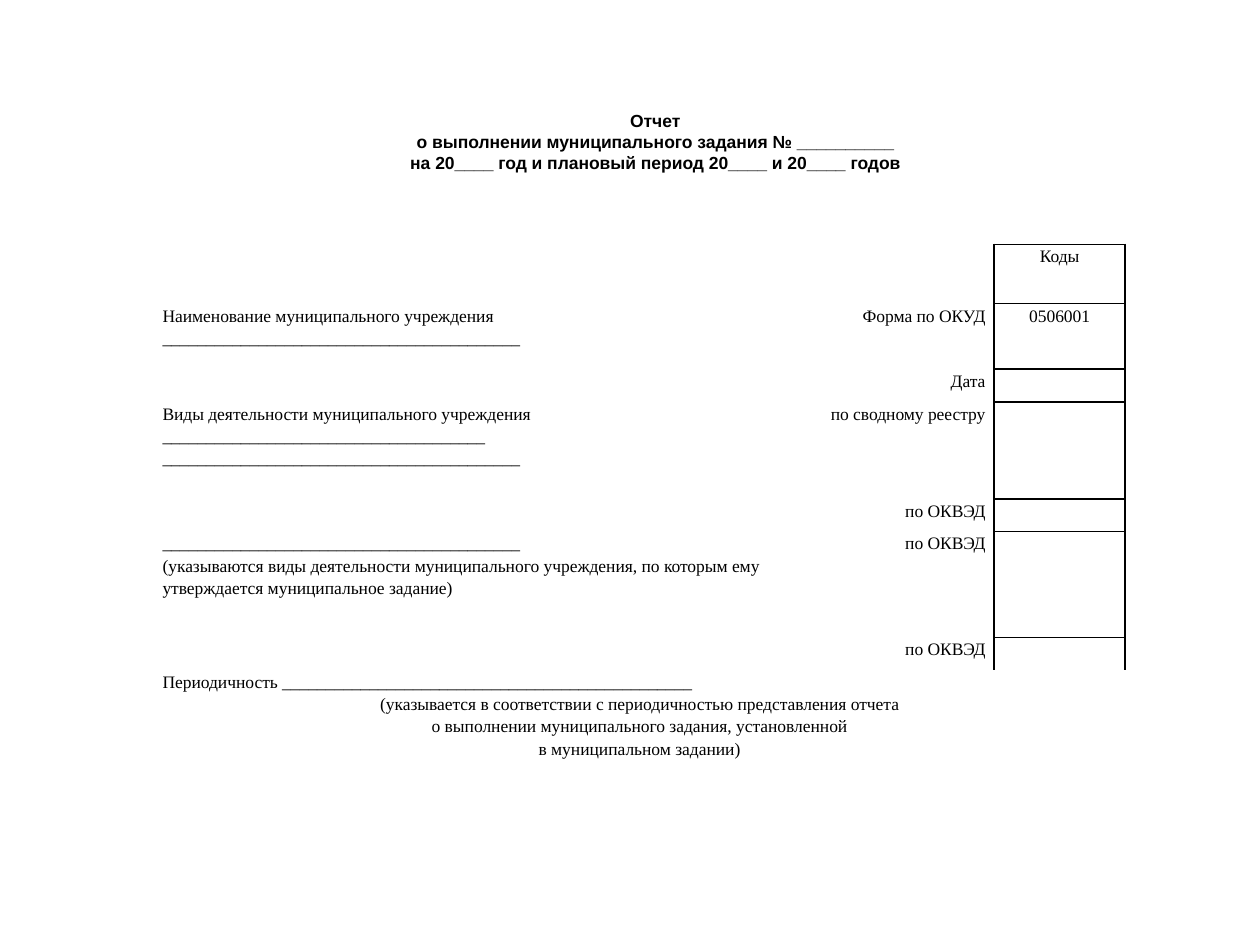
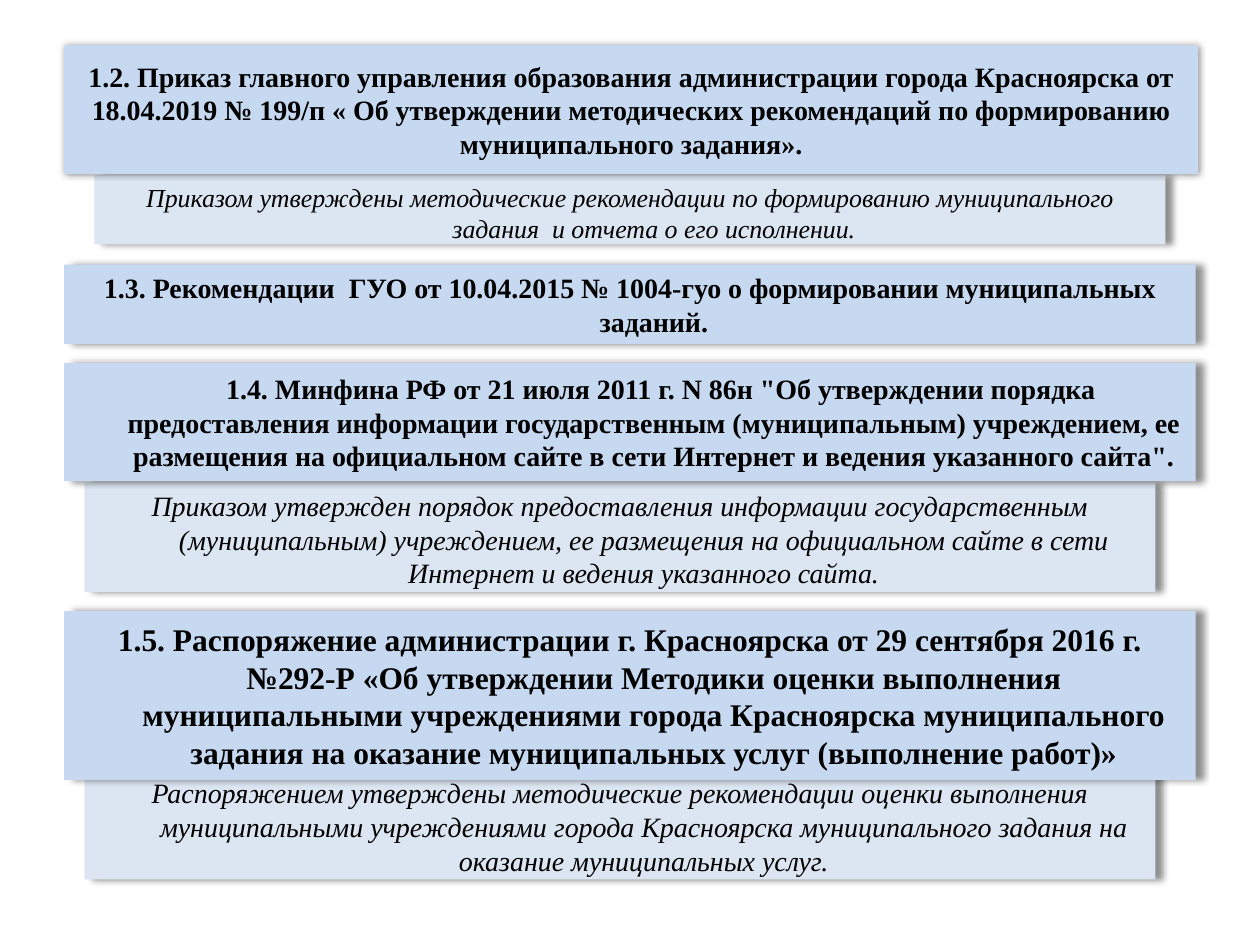
from lxml import etree
from pptx import Presentation
from pptx.dml.color import RGBColor
from pptx.enum.shapes import MSO_SHAPE
from pptx.enum.text import MSO_ANCHOR, PP_ALIGN
from pptx.oxml.ns import qn
from pptx.util import Inches, Pt

RECT = MSO_SHAPE.RECTANGLE
TOP, MID = MSO_ANCHOR.TOP, MSO_ANCHOR.MIDDLE
LEFT, CENTER, RIGHT = PP_ALIGN.LEFT, PP_ALIGN.CENTER, PP_ALIGN.RIGHT
BLACK = RGBColor(0, 0, 0)
BLUE = RGBColor(0xC6, 0xD9, 0xF1)
PALE = RGBColor(0xDC, 0xE6, 0xF2)
SERIF, SANS = "Times New Roman", "Arial"
HANG = -0.38

TITLE = ["Отчет", "о выполнении муниципального задания № __________",
         "на 20____ год и плановый период 20____ и 20____ годов"]
LINE = "_" * 41
# Form rows: height, lines on the left, label, code
ROWS = [
    (0.47, [], "", "Коды"),
    (0.52, ["Наименование муниципального учреждения", LINE],
     "Форма по ОКУД", "0506001"),
    (0.26, [], "Дата", ""),
    (0.77, ["Виды деятельности муниципального учреждения " + "_" * 37, LINE],
     "по сводному реестру", ""),
    (0.26, [], "по ОКВЭД", ""),
    (0.84, [LINE, "(указываются виды деятельности муниципального учреждения, "
            "по которым ему утверждается муниципальное задание)"],
     "по ОКВЭД", ""),
    (0.26, [], "по ОКВЭД", ""),
]
PERIOD = "Периодичность " + "_" * 47
HINTS = ["(указывается в соответствии с периодичностью представления отчета",
         "о выполнении муниципального задания, установленной",
         "в муниципальном задании)"]

# Panels: left, top, height, size, text
NOTES = [
    (0.67, 6.11, 0.87, 16, "Распоряжением утверждены методические рекомендации "
     "оценки выполнения муниципальными учреждениями города Красноярска "
     "муниципального задания на оказание муниципальных услуг."),
    (0.75, 1.39, 0.55, 14.8, "Приказом утверждены методические рекомендации по "
     "формированию муниципального задания  и отчета о его исполнении."),
    (0.67, 3.83, 0.87, 16, "Приказом утвержден порядок предоставления "
     "информации государственным (муниципальным) учреждением, ее размещения "
     "на официальном сайте в сети Интернет и ведения указанного сайта."),
]
# Bars: top, height, size, first-line indent, text
BARS = [
    (2.88, 0.94, 16, 0.11, "1.4. Минфина РФ от 21 июля 2011 г. N 86н \"Об "
     "утверждении порядка предоставления информации государственным "
     "(муниципальным) учреждением, ее размещения на официальном сайте в сети "
     "Интернет и ведения указанного сайта\"."),
    (2.1, 0.63, 16, HANG, "1.3. Рекомендации  ГУО от 10.04.2015 № 1004-гуо о "
     "формировании муниципальных заданий."),
    (4.85, 1.34, 18, HANG, "1.5. Распоряжение администрации г. Красноярска от "
     "29 сентября 2016 г. №292-Р «Об утверждении Методики оценки выполнения "
     "муниципальными учреждениями города Красноярска муниципального задания "
     "на оказание муниципальных услуг (выполнение работ)»"),
]
HEAD = ("1.2. Приказ главного управления образования администрации города "
        "Красноярска от 18.04.2019 № 199/п « Об утверждении методических "
        "рекомендаций по формированию муниципального задания».")


def node(parent, tag, **attrs):
    return etree.SubElement(parent, qn(tag), {k: str(v) for k, v in attrs.items()})


def write(frame, lines, size=10, font=SERIF, bold=False, italic=False,
          align=LEFT, space=None, indent=None):
    """Fill a text frame, one paragraph a line."""
    for i, line in enumerate(lines):
        para = frame.add_paragraph() if i else frame.paragraphs[0]
        para.alignment = align
        para.line_spacing = space
        if indent is not None:
            props = para._p.get_or_add_pPr()
            props.set("marL", str(Inches(-HANG)))
            props.set("indent", str(Inches(indent)))
        if not line:
            node(para._p, "a:endParaRPr", sz=int(size * 100))
            continue
        run = para.add_run()
        run.text = line
        face = run.font
        face.size, face.name = Pt(size), font
        face.bold, face.italic = bold, italic
        face.color.rgb = BLACK


def edge(cell, sides):
    """Draw black borders on the given sides and clear the rest."""
    props = cell._tc.get_or_add_tcPr()
    for i, side in enumerate("LRTB"):
        line = etree.Element(qn("a:ln" + side), w=str(Pt(1)))
        if side in sides:
            node(node(line, "a:solidFill"), "a:srgbClr", val=BLACK)
        else:
            node(line, "a:noFill")
        props.insert(i, line)


def fill_cell(cell, lines, align=LEFT, sides=""):
    cell.margin_left = cell.margin_right = Inches(0.07)
    cell.margin_top = cell.margin_bottom = 0
    cell.fill.background()
    edge(cell, sides)
    write(cell.text_frame, lines or [""], align=align, space=1.15)


def add_title(slide, x, y, w, h):
    frame = slide.shapes.add_textbox(*map(Inches, (x, y, w, h))).text_frame
    frame.word_wrap = True
    write(frame, TITLE, font=SANS, bold=True, align=CENTER)


def add_form(slide, x, y, w, h):
    count = len(ROWS) + 1
    table = slide.shapes.add_table(count, 3, *map(Inches, (x, y, w, h))).table
    table.first_row = table.horz_banding = False
    for col, width in zip(table.columns, (5.17, 1.5, 1.04)):
        col.width = Inches(width)
    for i, (high, left, label, code) in enumerate(ROWS):
        table.rows[i].height = Inches(high)
        fill_cell(table.cell(i, 0), left)
        fill_cell(table.cell(i, 1), [label], RIGHT, "R")
        last = i == len(ROWS) - 1
        fill_cell(table.cell(i, 2), [code], CENTER, "LRT" if last else "LRTB")
    # Period row across the whole form
    end = count - 1
    table.rows[end].height = Inches(h - sum(row[0] for row in ROWS))
    for j in range(3):
        fill_cell(table.cell(end, j), [PERIOD, *HINTS] if j == 0 else [])
    first = table.cell(end, 0)
    first.merge(table.cell(end, 2))
    for para in first.text_frame.paragraphs[1:]:
        para.alignment = CENTER


def add_panel(slide, x, y, w, h, text, color, anchor=MID, dist=4, **style):
    """A filled box with a soft shadow and centred text."""
    box = slide.shapes.add_shape(RECT, *map(Inches, (x, y, w, h)))
    box.fill.solid()
    box.fill.fore_color.rgb = color
    box.line.fill.background()
    box.shadow.inherit = False
    effects = box._element.spPr.find(qn("a:effectLst"))
    shade = node(effects, "a:outerShdw", blurRad=Pt(4), dist=Pt(dist),
                 dir=359 * 60000, algn="ctr", rotWithShape=0)
    node(node(shade, "a:srgbClr", val=BLACK), "a:alpha", val=43000)
    frame = box.text_frame
    frame.word_wrap = True
    frame.vertical_anchor = anchor
    write(frame, [text], align=CENTER, **style)


def form_slide(slide):
    add_form(slide, 1.22, 1.94, 7.72, 4.41)
    add_title(slide, 2.01, 0.82, 6.38, 0.91)


def order_slide(slide):
    # Notes lie under the bars
    for x, y, h, size, text in NOTES:
        add_panel(slide, x, y, 8.5, h, text, PALE, TOP, size=size,
                  italic=True, indent=HANG)
    for y, h, size, indent, text in BARS:
        add_panel(slide, 0.51, y, 8.98, h, text, BLUE, size=size,
                  bold=True, indent=indent)
    add_panel(slide, 0.51, 0.36, 9, 1.02, HEAD, BLUE, dist=0, size=16, bold=True)


def main():
    deck = Presentation()
    deck.slide_width, deck.slide_height = Inches(10), Inches(7.5)
    for build in (form_slide, order_slide):
        build(deck.slides.add_slide(deck.slide_layouts[6]))
    deck.save("out.pptx")


if __name__ == "__main__":
    main()
